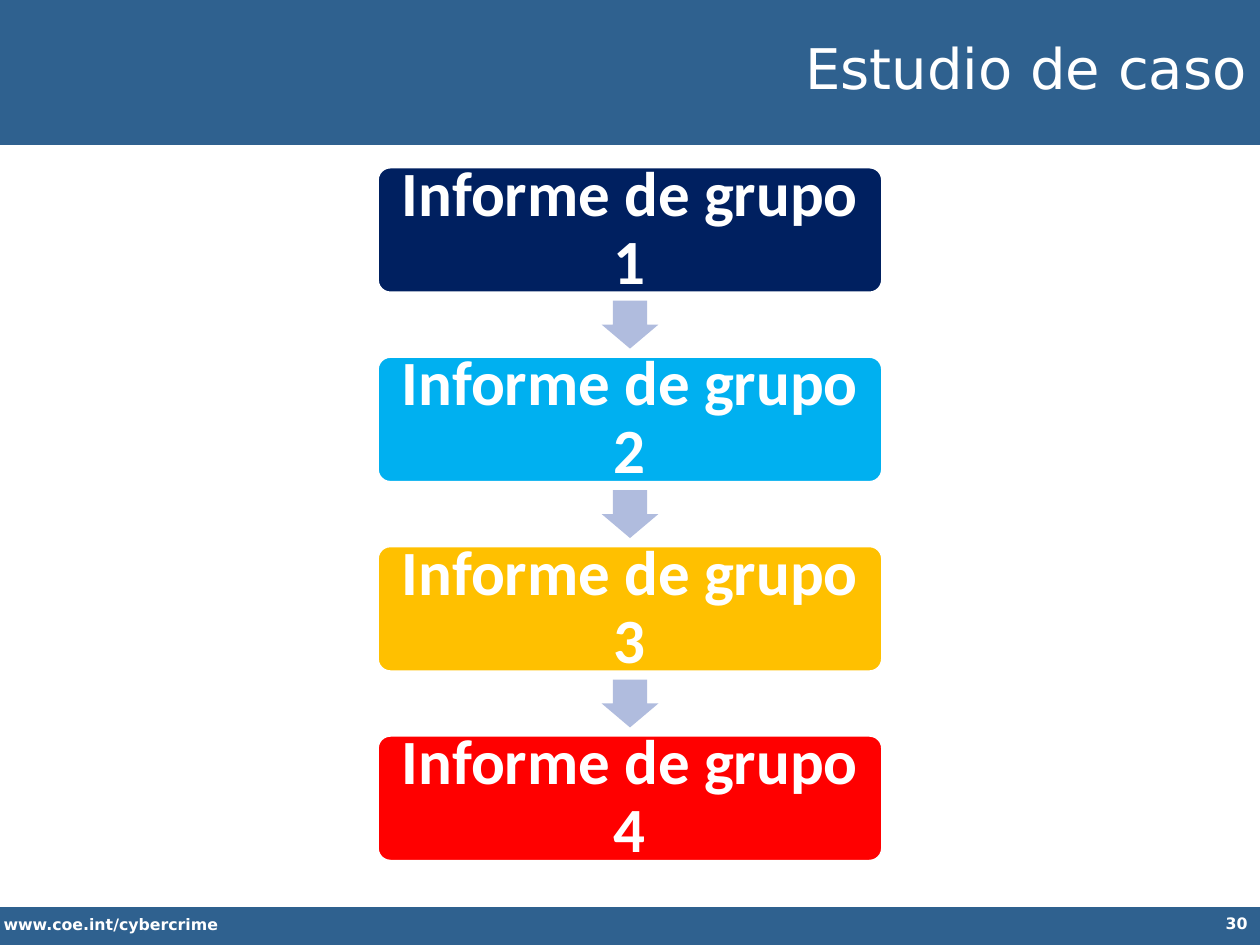
import pptx
import pptx.util
from pptx.dml.color import RGBColor
from pptx.enum.shapes import MSO_SHAPE
from pptx.enum.text import MSO_ANCHOR, MSO_AUTO_SIZE, PP_ALIGN
from pptx.util import Inches

COLORS = {
    "band": "2F618F",
    "white": "FFFFFF",
    "arrow": "B0BCDE",
    "group 1": "002060",
    "group 2": "00B0F0",
    "group 3": "FFC000",
    "group 4": "FF0000",
}


def rgb(name):
    return RGBColor.from_string(COLORS[name])


def add_filled(s, kind, box, color, adjustments=()):
    sp = s.shapes.add_shape(kind, *box)
    sp.shadow.inherit = False
    sp.fill.solid()
    sp.fill.fore_color.rgb = rgb(color)
    sp.line.fill.background()
    for i, value in enumerate(adjustments):
        sp.adjustments[i] = value
    return sp


def write(sp, text, size, font, align, bold=True, anchor=MSO_ANCHOR.TOP):
    """Put one white paragraph in a shape, and return the paragraph."""
    tf = sp.text_frame
    tf.word_wrap = True
    tf.auto_size = MSO_AUTO_SIZE.NONE
    tf.vertical_anchor = anchor
    tf.text = text
    p = tf.paragraphs[0]
    p.alignment = align
    r = p.runs[0]
    r.font.size = pptx.util.Pt(size)
    r.font.name = font
    r.font.bold = bold
    r.font.color.rgb = rgb("white")
    return p


def add_header(s, left, top, width, height):
    add_filled(s, MSO_SHAPE.RECTANGLE, (left, top, width, height), "band")
    title = s.shapes.title
    title.left, title.top = left + Inches(3.07), Inches(0)
    title.width, title.height = width - Inches(3.07), Inches(1.13)
    p = write(title, "Estudio de caso", 32, "DejaVu Sans", PP_ALIGN.RIGHT,
              bold=False, anchor=MSO_ANCHOR.MIDDLE)
    p.line_spacing = 0.9
    s.shapes._spTree.append(title._element)  # bring the title in front of the band


def add_footer(s, left, top, width, height):
    add_filled(s, MSO_SHAPE.RECTANGLE, (left, top, width, height), "band")
    address = s.shapes.add_textbox(left - Inches(0.07), top + Inches(0.01),
                                   Inches(3.52), Inches(0.25))
    write(address, "www.coe.int/cybercrime", 9, "DejaVu Sans", PP_ALIGN.LEFT)
    number_width = Inches(2.25)
    number = s.shapes.add_textbox(left + width - number_width, top,
                                  number_width, Inches(0.31))
    write(number, "30", 9, "DejaVu Sans", PP_ALIGN.RIGHT)


def add_group_flow(s, left, top, width, height, count=4):
    """Stack the group reports, with a down arrow centred in each gap."""
    card_h = Inches(0.99)
    pitch = (height - card_h) // (count - 1)
    arrow_w, arrow_h = Inches(0.45), Inches(0.38)
    for i in range(count):
        y = top + i * pitch
        card = add_filled(s, MSO_SHAPE.ROUNDED_RECTANGLE, (left, y, width, card_h),
                          f"group {i + 1}", [0.1])
        card.line.color.rgb = rgb("white")
        card.line.width = pptx.util.Pt(1)
        tf = card.text_frame
        tf.margin_left = tf.margin_right = Inches(0.12)
        tf.margin_top = tf.margin_bottom = Inches(0.15)
        p = write(card, f"Informe de grupo {i + 1}", 36, "Calibri",
                  PP_ALIGN.CENTER, anchor=MSO_ANCHOR.MIDDLE)
        p.line_spacing = 0.9
        if i < count - 1:
            arrow_x = left + (width - arrow_w) // 2
            arrow_y = y + (card_h + pitch - arrow_h) // 2
            add_filled(s, MSO_SHAPE.DOWN_ARROW, (arrow_x, arrow_y, arrow_w, arrow_h),
                       "arrow", [0.6, 0.5])


def main():
    prs = pptx.Presentation()
    prs.slide_width, prs.slide_height = Inches(10), Inches(7.5)
    s = prs.slides.add_slide(prs.slide_layouts[5])
    add_header(s, Inches(0), Inches(-0.03), prs.slide_width, Inches(1.18))
    add_footer(s, Inches(0), Inches(7.2), prs.slide_width, Inches(0.32))
    add_group_flow(s, Inches(3), Inches(1.33), Inches(4), Inches(5.5))
    prs.save("out.pptx")


if __name__ == "__main__":
    main()
